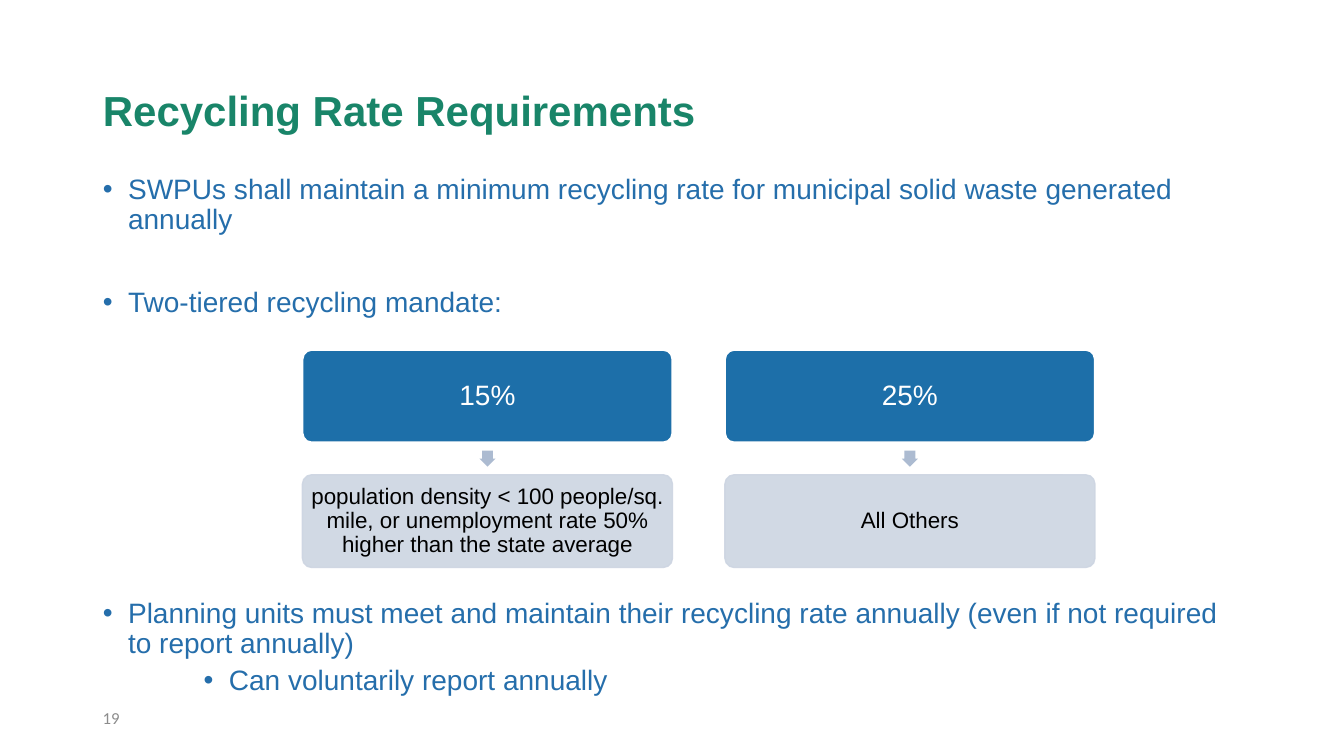
import dataclasses

import lxml.etree
import pptx
import pptx.dml.color
import pptx.enum.shapes
import pptx.enum.text
import pptx.oxml.ns
import pptx.util

Inches = pptx.util.Inches
Pt = pptx.util.Pt
Shape = pptx.enum.shapes.MSO_SHAPE
Align = pptx.enum.text.PP_ALIGN
Anchor = pptx.enum.text.MSO_ANCHOR
qn = pptx.oxml.ns.qn


@dataclasses.dataclass(frozen=True)
class Theme:
    font: str = "Arial"
    number_font: str = "Calibri"
    green: str = "198569"
    blue_text: str = "256EAB"
    blue: str = "1D6FA9"
    pale: str = "CDD5E2"
    arrow: str = "ACBBD1"
    white: str = "FFFFFF"
    black: str = "000000"
    grey: str = "8C8C8C"
    title_size: int = 30
    body_size: int = 20
    detail_size: int = 16
    number_size: int = 12


THEME = Theme()
REQUIREMENTS = [
    ("SWPUs shall maintain a minimum recycling rate for municipal solid waste generated annually", 0, 0),
    ("Two-tiered recycling mandate:", 0, 37.5),
    ("Planning units must meet and maintain their recycling rate annually "
     "(even if not required to report annually)", 0, 200.5),
    ("Can voluntarily report annually", 2, 5),
]
TIERS = [
    ("15%", "population density < 100 people/sq. mile, or unemployment rate 50% higher than the state average"),
    ("25%", "All Others"),
]


def rgb(color):
    return pptx.dml.color.RGBColor.from_string(color)


def format_runs(paragraph, size, color, font=THEME.font, bold=False):
    for run in paragraph.runs:
        run.font.size = Pt(size)
        run.font.name = font
        run.font.bold = bold
        run.font.color.rgb = rgb(color)


def place(shape, box):
    shape.left, shape.top, shape.width, shape.height = map(Inches, box)


def add_title(slide, box, text):
    heading = slide.shapes.title
    place(heading, box)
    frame = heading.text_frame
    frame.text = text
    frame.vertical_anchor = Anchor.MIDDLE
    frame.auto_size = pptx.enum.text.MSO_AUTO_SIZE.NONE
    paragraph = frame.paragraphs[0]
    paragraph.alignment = Align.LEFT
    paragraph.line_spacing = 0.9
    format_runs(paragraph, THEME.title_size, THEME.green, bold=True)


def add_requirements(slide, box, items):
    requirements = slide.placeholders[1]
    place(requirements, box)
    frame = requirements.text_frame
    frame.text = "\n".join(text for text, _, _ in items)
    frame.auto_size = pptx.enum.text.MSO_AUTO_SIZE.NONE
    for paragraph, (_, level, space) in zip(frame.paragraphs, items):
        paragraph.level = level
        paragraph.line_spacing = 0.9
        paragraph.space_before = Pt(space)
        properties = paragraph._p.get_or_add_pPr()
        properties.set("marL", str(Inches(0.25 + 0.5 * level)))
        properties.set("indent", str(-Inches(0.25)))
        bullet_font = lxml.etree.SubElement(properties, qn("a:buFont"))
        bullet_font.set("typeface", THEME.font)
        lxml.etree.SubElement(properties, qn("a:buChar")).set("char", "•")
        format_runs(paragraph, THEME.body_size, THEME.blue_text)


def add_solid(slide, kind, box, fill, adjustments):
    solid = slide.shapes.add_shape(kind, *map(Inches, box))
    solid.shadow.inherit = False
    solid.fill.solid()
    solid.fill.fore_color.rgb = rgb(fill)
    solid.line.fill.background()
    for index, value in enumerate(adjustments):
        solid.adjustments[index] = value
    return solid


def add_card(slide, box, text, size, color, fill, outline, weight, inset, alpha=None):
    card = add_solid(slide, Shape.ROUNDED_RECTANGLE, box, fill, [0.1])
    card.line.color.rgb = rgb(outline)
    card.line.width = Pt(weight)
    if alpha:
        for tint in card._element.spPr.iter(qn("a:srgbClr")):
            lxml.etree.SubElement(tint, qn("a:alpha")).set("val", str(alpha * 1000))
    frame = card.text_frame
    frame.text = text
    frame.word_wrap = True
    frame.vertical_anchor = Anchor.MIDDLE
    frame.margin_left = frame.margin_right = Inches(inset)
    frame.margin_top = frame.margin_bottom = Inches(inset)
    paragraph = frame.paragraphs[0]
    paragraph.alignment = Align.CENTER
    paragraph.line_spacing = 0.9
    format_runs(paragraph, size, color)


def add_tiers(slide, box, tiers, gap=0.52, card_height=0.92, arrow_size=0.16):
    left, top, width, height = box
    card_width = (width - gap * (len(tiers) - 1)) / len(tiers)
    for index, (rate, condition) in enumerate(tiers):
        x = left + index * (card_width + gap)
        add_card(slide, (x, top, card_width, card_height), rate, THEME.body_size,
                 THEME.white, THEME.blue, THEME.white, 1.5, 0.03)
        arrow_box = (x + (card_width - arrow_size) / 2, top + (height - arrow_size) / 2,
                     arrow_size, arrow_size)
        add_solid(slide, Shape.DOWN_ARROW, arrow_box, THEME.arrow, [0.67, 0.5])
        add_card(slide, (x, top + height - card_height, card_width, card_height), condition,
                 THEME.detail_size, THEME.black, THEME.pale, THEME.pale, 1, 0.02, 90)


def add_page_number(slide, box, number):
    frame = slide.shapes.add_textbox(*map(Inches, box)).text_frame
    frame.text = number
    frame.word_wrap = True
    frame.vertical_anchor = Anchor.MIDDLE
    format_runs(frame.paragraphs[0], THEME.number_size, THEME.grey, THEME.number_font)


def main():
    deck = pptx.Presentation()
    deck.slide_width = Inches(13.33)
    deck.slide_height = Inches(7.5)
    slide = deck.slides.add_slide(deck.slide_layouts[1])
    add_title(slide, (0.92, 0.4, 11.5, 1.45), "Recycling Rate Requirements")
    add_requirements(slide, (0.92, 1.69, 11.5, 5.32), REQUIREMENTS)
    add_tiers(slide, (3, 3.47, 7.86, 2.16), TIERS)
    add_page_number(slide, (0.92, 6.9, 11.5, 0.45), "19")
    deck.save("out.pptx")


if __name__ == "__main__":
    main()
